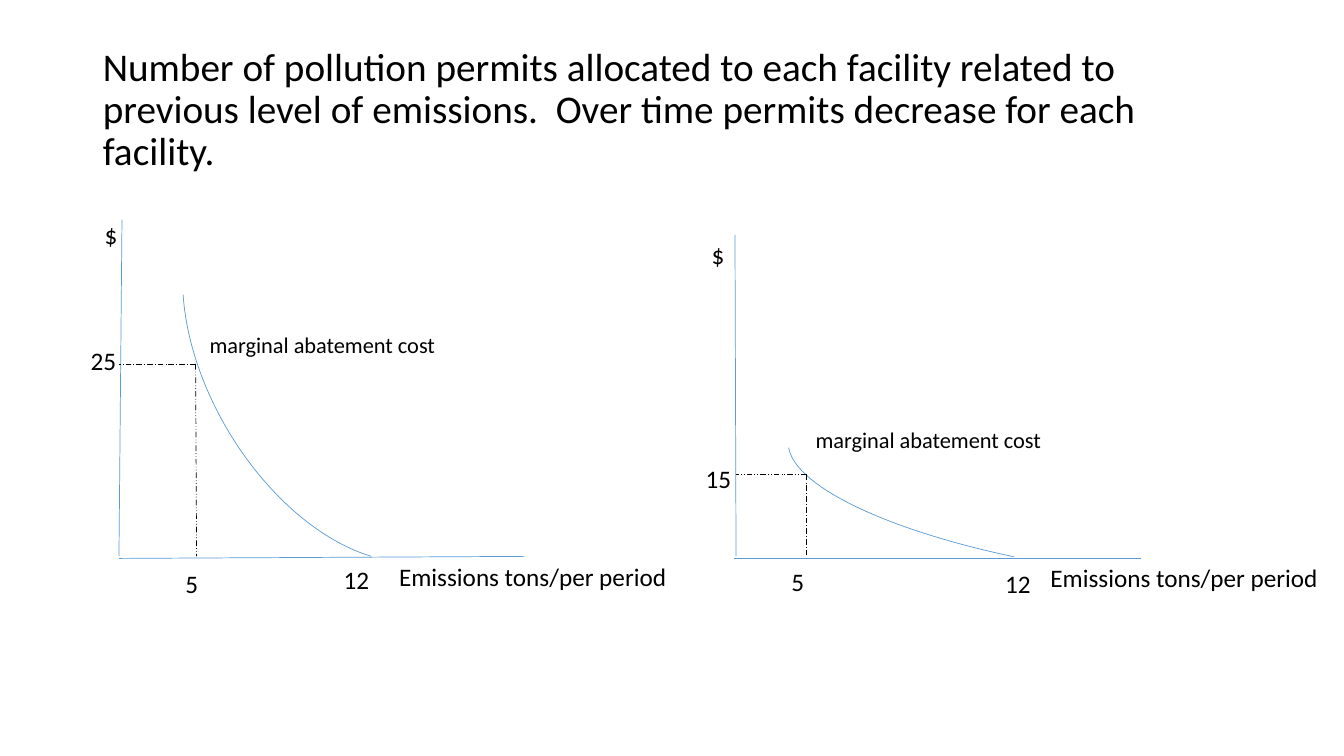
from lxml import etree
from pptx import Presentation
from pptx import util as u
from pptx.dml.color import RGBColor
from pptx.enum import dml, shapes, text
from pptx.oxml.ns import qn

COLOURS = {"curve": "5B9BD5", "ink": "000000"}
FONT = "Calibri"
DASHES = {
    "dot": dml.MSO_LINE.LONG_DASH_DOT,
    "dot dot": dml.MSO_LINE.DASH_DOT_DOT,
}
TITLE = (
    "Number of pollution permits allocated to each facility related to previous "
    "level of emissions.  Over time permits decrease for each facility."
)

# Lines are (start, end); arcs are (left, top, width, height, rotation, adjustments).
FACILITIES = [
    {
        "axes": [((1.21, 2.18), (1.18, 5.52)), ((1.18, 5.54), (5.2, 5.52))],
        "cost_curve": (2.08, 1.46, 2.59, 4.3, 149.3, (174.94, 32.71)),
        "guides": [
            ((1.94, 3.61), (1.95, 5.52), "dot dot"),
            ((1.94, 3.61), (1.18, 3.61), "dot"),
        ],
        "labels": [
            ("$", 0.94, 2.13, 0.35, 18),
            ("25", 0.8, 3.38, 0.51, 18),
            ("5", 1.74, 5.59, 0.51, 18),
            ("12", 3.31, 5.55, 0.51, 18),
            ("marginal abatement cost", 1.98, 3.24, 3.15, 16),
            ("Emissions tons/per period", 3.86, 5.52, 3, 18),
        ],
    },
    {
        "axes": [((7.29, 2.33), (7.3, 5.52)), ((7.28, 5.54), (11.32, 5.54))],
        "cost_curve": (7.79, 3.94, 6.24, 1.72, 188, (186.98, 215.18)),
        "guides": [
            ((8, 4.71), (8, 5.52), "dot"),
            ((8, 4.71), (7.3, 4.71), "dot dot"),
        ],
        "labels": [
            ("$", 6.96, 2.33, 0.35, 18),
            ("15", 6.9, 4.55, 0.51, 18),
            ("5", 7.75, 5.57, 0.51, 18),
            ("12", 9.87, 5.59, 0.51, 18),
            ("marginal abatement cost", 7.99, 4.18, 3.15, 16),
            ("Emissions tons/per period", 10.32, 5.53, 3, 18),
        ],
    },
]


def add_span(para, wording, size):
    span = para.add_run()
    span.text = wording
    span.font.name = FONT
    span.font.size = u.Pt(size)
    span.font.color.rgb = RGBColor.from_string(COLOURS["ink"])


def style_line(line, colour):
    line.width = u.Pt(0.5)
    line.color.rgb = RGBColor.from_string(COLOURS[colour])


def add_title(page):
    box = page.shapes.title
    box.left, box.top = u.Inches(0.92), u.Inches(0.42)
    box.width, box.height = u.Inches(11.5), u.Inches(1.4)
    frame = box.text_frame
    frame.word_wrap = True
    frame.auto_size = text.MSO_AUTO_SIZE.NONE
    frame.vertical_anchor = text.MSO_ANCHOR.TOP
    para = frame.paragraphs[0]
    para.alignment = text.PP_ALIGN.LEFT
    para.line_spacing = 0.9
    add_span(para, TITLE, 28)


def add_line(page, start, end, colour, dash=None):
    points = [u.Inches(value) for value in (*start, *end)]
    connector = page.shapes.add_connector(shapes.MSO_CONNECTOR.STRAIGHT, *points)
    style_line(connector.line, colour)
    if dash:
        connector.line.dash_style = DASHES[dash]
    etree.SubElement(connector._element.spPr, qn("a:effectLst"))


def add_cost_curve(page, left, top, width, height, rotation, adjustments):
    area = [u.Inches(value) for value in (left, top, width, height)]
    curve = page.shapes.add_shape(shapes.MSO_SHAPE.ARC, *area)
    curve.rotation = rotation
    for index, value in enumerate(adjustments):
        curve.adjustments[index] = value
    curve.fill.background()
    curve.shadow.inherit = False
    style_line(curve.line, "curve")


def add_label(page, wording, left, top, width, size):
    height = 0.4 if size == 18 else 0.37
    area = [u.Inches(value) for value in (left, top, width, height)]
    frame = page.shapes.add_textbox(*area).text_frame
    frame.word_wrap = True
    add_span(frame.paragraphs[0], wording, size)


def add_facility(page, facility):
    """Draw one cost diagram: axes, curve, dashed guides and labels."""
    for start, end in facility["axes"]:
        add_line(page, start, end, "curve")
    add_cost_curve(page, *facility["cost_curve"])
    for start, end, dash in facility["guides"]:
        add_line(page, start, end, "ink", dash)
    for label in facility["labels"]:
        add_label(page, *label)


def main():
    deck = Presentation()
    deck.slide_width, deck.slide_height = u.Inches(13.33), u.Inches(7.5)
    page = deck.slides.add_slide(deck.slide_layouts.get_by_name("Title Only"))
    add_title(page)
    for facility in FACILITIES:
        add_facility(page, facility)
    deck.save("out.pptx")


if __name__ == "__main__":
    main()
